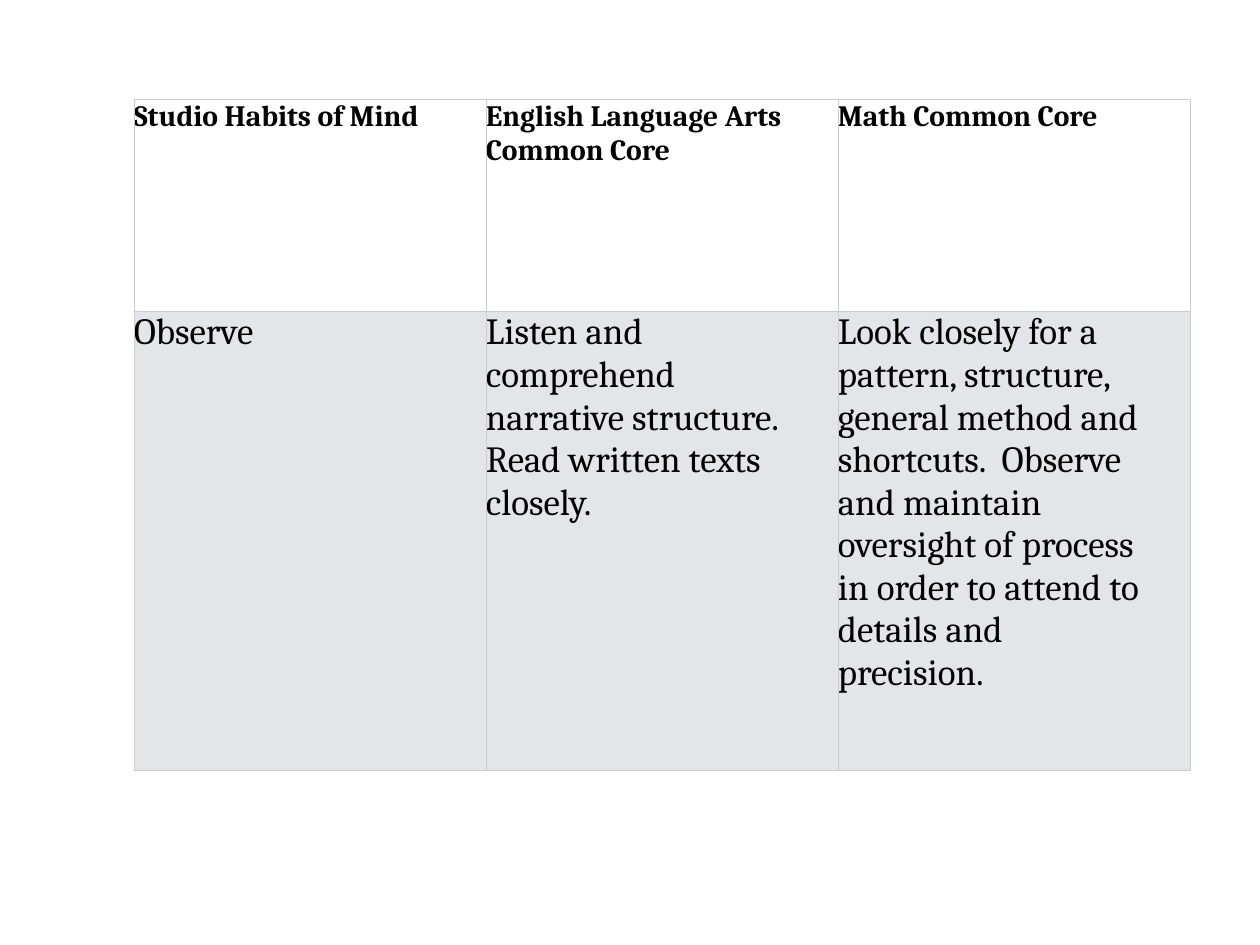
from lxml import etree
from pptx import Presentation
from pptx import util as u
from pptx.dml.color import RGBColor
from pptx.oxml import ns

BLACK = RGBColor(0x00, 0x00, 0x00)
WHITE = RGBColor(0xFF, 0xFF, 0xFF)
PALE_GREY = RGBColor(0xE3, 0xE5, 0xE8)
RULE_GREY = RGBColor(0xCB, 0xCB, 0xCB)
FONT = "Cambria"
RIGHT_INSET = 0.45  # inches kept clear at the end of each line
TOP_INSET = 0.01

# Each row: height in inches, text size, bold, fill, wording
STANDARDS = [
    (2.39, 24, True, WHITE, [
        "Studio Habits of Mind",
        "English Language Arts Common Core",
        "Math Common Core",
    ]),
    (5.19, 30, False, PALE_GREY, [
        "Observe",
        "Listen and comprehend narrative structure.  Read written texts closely.",
        "Look closely for a pattern, structure, general method and shortcuts.  "
        "Observe and maintain oversight of process in order to attend to "
        "details and precision.",
    ]),
]


def rule_cell(cell, color, width):
    """Draw a thin line on all four sides; borders precede the fill in tcPr."""
    properties = cell._tc.get_or_add_tcPr()
    for position, side in enumerate(("lnL", "lnR", "lnT", "lnB")):
        border = etree.Element(ns.qn(f"a:{side}"), w=str(u.Pt(width)))
        solid = etree.SubElement(border, ns.qn("a:solidFill"))
        etree.SubElement(solid, ns.qn("a:srgbClr"), val=str(color))
        properties.insert(position, border)


def fill_cell(cell, wording, size, bold, fill):
    cell.margin_left = cell.margin_bottom = 0
    cell.margin_right = u.Inches(RIGHT_INSET)
    cell.margin_top = u.Inches(TOP_INSET)
    cell.fill.solid()
    cell.fill.fore_color.rgb = fill
    cell.text_frame.text = wording
    font = cell.text_frame.paragraphs[0].runs[0].font
    font.name, font.size, font.bold = FONT, u.Pt(size), bold
    font.color.rgb = BLACK
    rule_cell(cell, RULE_GREY, 0.5)


def add_standards_table(slide, left, top, width):
    """Equal columns across the width, rows as tall as STANDARDS says."""
    column_count = len(STANDARDS[0][-1])
    height = sum(row[0] for row in STANDARDS)
    table = slide.shapes.add_table(
        len(STANDARDS), column_count,
        *(u.Inches(length) for length in (left, top, width, height))).table
    table.first_row = table.horz_banding = False
    for column in table.columns:
        column.width = u.Inches(width / column_count)
    for row, (row_height, size, bold, fill, wordings) in zip(table.rows, STANDARDS):
        row.height = u.Inches(row_height)
        for cell, wording in zip(row.cells, wordings):
            fill_cell(cell, wording, size, bold, fill)


def main():
    deck = Presentation()
    deck.slide_width, deck.slide_height = u.Inches(14.22), u.Inches(10.67)
    slide = deck.slides.add_slide(deck.slide_layouts[6])

    # Studio habits matched to the Common Core
    add_standards_table(slide, left=1.51, top=1.12, width=11.92)

    deck.save("out.pptx")


if __name__ == "__main__":
    main()
